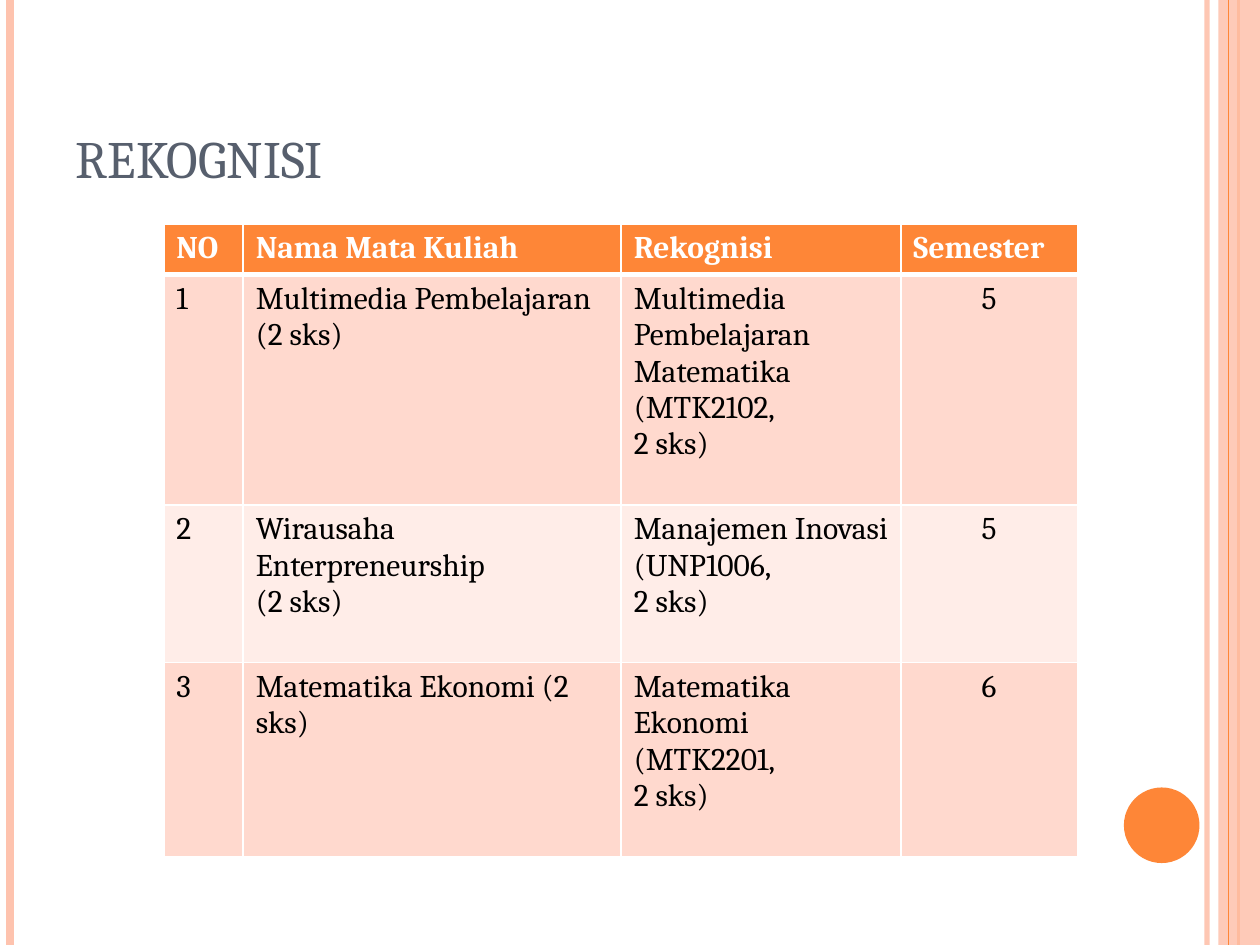
"""Build the REKOGNISI course recognition slide."""
from lxml.etree import SubElement
from pptx import Presentation
from pptx.dml.color import RGBColor
from pptx.enum.shapes import MSO_CONNECTOR, MSO_SHAPE
from pptx.enum.text import MSO_ANCHOR, PP_ALIGN
from pptx.oxml import parse_xml
from pptx.oxml.ns import nsdecls, qn
from pptx.util import Inches, Pt

FONT = "Cambria"
COLORS = {
    "accent": "FE8637", "peach": "FEC3AE", "title": "575F6D", "white": "FFFFFF",
    "text": "000000", "odd": "FFD9CE", "even": "FFEDE8",
}
TITLE = "REKOGNISI"
COURSES = [
    ("NO", "Nama Mata Kuliah", "Rekognisi", "Semester"),
    ("1", "Multimedia Pembelajaran\n(2 sks)",
     "Multimedia Pembelajaran Matematika (MTK2102,\n2 sks)", "5"),
    ("2", "Wirausaha Enterpreneurship\n(2 sks)",
     "Manajemen Inovasi (UNP1006,\n2 sks)", "5"),
    ("3", "Matematika Ekonomi (2 sks)",
     "Matematika Ekonomi (MTK2201,\n2 sks)", "6"),
]
COLUMN_WIDTHS = (0.63, 3, 2.22, 1.4)
ROW_HEIGHTS = (0.4, 1.83, 1.25, 1.54)
TABLE_LEFT, TABLE_TOP = 1.3, 1.78
STRIPES_BEHIND = [(9.58, "peach", 3, 93), (0.08, "peach", 4.5, 100), (9.83, "accent", 1.5, 100)]
STRIPES_FRONT = [(9.75, "accent", 0.75, 100)]


def rgb(name):
    return RGBColor.from_string(COLORS[name])


def set_opacity(element, percent):
    if percent < 100:
        color = next(element.iter(qn("a:srgbClr")))
        SubElement(color, qn("a:alpha")).set("val", str(percent * 1000))


def add_stripe(slide, height, x, color, weight, opacity):
    stripe = slide.shapes.add_connector(MSO_CONNECTOR.STRAIGHT, Inches(x), 0, Inches(x), height)
    stripe.line.color.rgb = rgb(color)
    stripe.line.width = Pt(weight)
    properties = stripe._element.spPr
    set_opacity(properties, opacity)
    SubElement(properties, qn("a:effectLst"))


def add_ornament(slide, preset, box, color, opacity=100):
    ornament = slide.shapes.add_shape(preset, *map(Inches, box))
    ornament.shadow.inherit = False
    ornament.fill.solid()
    ornament.fill.fore_color.rgb = rgb(color)
    ornament.line.fill.background()
    set_opacity(ornament._element.spPr, opacity)


def set_borders(cell, row):
    weights = {"lnL": 1, "lnR": 1, "lnT": 3 if row == 1 else 1, "lnB": 3 if row == 0 else 1}
    properties = cell._tc.get_or_add_tcPr()
    for position, (side, weight) in enumerate(weights.items()):
        properties.insert(position, parse_xml(
            f'<a:{side} {nsdecls("a")} w="{Pt(weight)}"><a:solidFill>'
            f'<a:srgbClr val="{COLORS["white"]}"/></a:solidFill></a:{side}>'))


def format_cell(cell, words, row, column):
    is_header = row == 0
    cell.text = words
    cell.fill.solid()
    cell.fill.fore_color.rgb = rgb("accent" if is_header else "odd" if row % 2 else "even")
    set_borders(cell, row)
    for paragraph in cell.text_frame.paragraphs:
        paragraph.font.name = FONT
        paragraph.font.size = Pt(18)
        paragraph.font.bold = is_header
        paragraph.font.color.rgb = rgb("white" if is_header else "text")
        if column == 3 and not is_header:
            paragraph.alignment = PP_ALIGN.CENTER


def add_courses(slide):
    table = slide.shapes.add_table(
        len(COURSES), len(COLUMN_WIDTHS), Inches(TABLE_LEFT), Inches(TABLE_TOP),
        Inches(sum(COLUMN_WIDTHS)), Inches(sum(ROW_HEIGHTS))).table
    for column, width in zip(table.columns, COLUMN_WIDTHS):
        column.width = Inches(width)
    for row, height in zip(table.rows, ROW_HEIGHTS):
        row.height = Inches(height)
    for row, course in enumerate(COURSES):
        for column, words in enumerate(course):
            format_cell(table.cell(row, column), words, row, column)


def format_title(title):
    title.left, title.top, title.width, title.height = map(Inches, (0.5, 0.3, 8.17, 1.25))
    title.text = TITLE
    title.text_frame.vertical_anchor = MSO_ANCHOR.BOTTOM
    paragraph = title.text_frame.paragraphs[0]
    paragraph.alignment = PP_ALIGN.LEFT
    paragraph.font.name = FONT
    paragraph.font.size = Pt(30)
    paragraph.font.color.rgb = rgb("title")


def main():
    deck = Presentation()
    deck.slide_width, deck.slide_height = Inches(10), Inches(7.5)
    slide = deck.slides.add_slide(deck.slide_layouts[5])
    for stripe in STRIPES_BEHIND:
        add_stripe(slide, deck.slide_height, *stripe)
    add_ornament(slide, MSO_SHAPE.RECTANGLE, (9.67, 0, 0.33, 7.5), "peach", 87)
    for stripe in STRIPES_FRONT:
        add_stripe(slide, deck.slide_height, *stripe)
    add_ornament(slide, MSO_SHAPE.OVAL, (8.92, 6.25, 0.6, 0.6), "accent")
    format_title(slide.shapes.title)
    add_courses(slide)
    deck.save("out.pptx")


if __name__ == "__main__":
    main()
